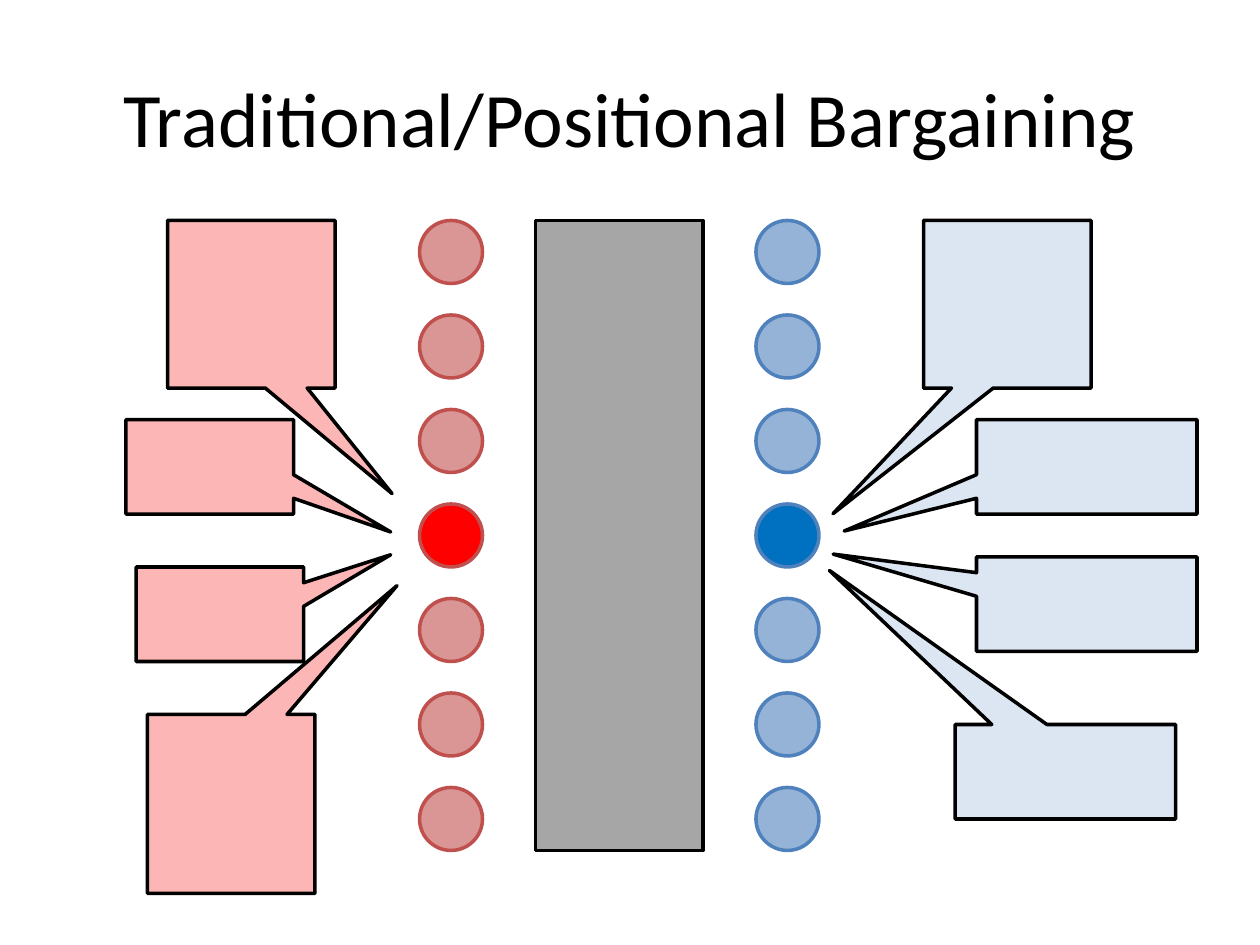
from dataclasses import dataclass

from pptx import Presentation
from pptx.dml.color import RGBColor
from pptx.enum.shapes import MSO_SHAPE
from pptx.enum.text import MSO_ANCHOR, PP_ALIGN
from pptx.util import Inches, Pt

RECT = MSO_SHAPE.RECTANGLE
OVAL = MSO_SHAPE.OVAL
CALLOUT = MSO_SHAPE.RECTANGULAR_CALLOUT
MIDDLE = MSO_ANCHOR.MIDDLE
CENTER = PP_ALIGN.CENTER


@dataclass(frozen=True)
class Theme:
    font: str = "Calibri"
    title: int = 44
    line: int = 2
    black: str = "000000"
    table: str = "A6A6A6"
    red: str = "D99694"
    red_edge: str = "C0504D"
    red_lead: str = "FF0000"
    red_talk: str = "FCB6B6"
    blue: str = "95B3D7"
    blue_edge: str = "4F81BD"
    blue_lead: str = "0070C0"
    blue_talk: str = "DCE6F2"


theme = Theme()


def add_box(shapes, kind, box, fill, edge):
    shape = shapes.add_shape(kind, *[Inches(n) for n in box])
    shape.shadow.inherit = False
    shape.fill.solid()
    shape.fill.fore_color.rgb = RGBColor.from_string(fill)
    shape.line.color.rgb = RGBColor.from_string(edge)
    shape.line.width = Pt(theme.line)
    return shape


deck = Presentation()
deck.slide_width, deck.slide_height = Inches(10), Inches(7.5)
slide = deck.slides.add_slide(deck.slide_layouts[5])

# Title
title = slide.shapes.title
title.left, title.top = Inches(0.5), Inches(0.3)
title.width, title.height = Inches(9), Inches(1.25)
frame = title.text_frame
frame.word_wrap = True
frame.vertical_anchor = MIDDLE
para = frame.paragraphs[0]
para.alignment = CENTER
run = para.add_run()
run.text = "Traditional/Positional Bargaining"
run.font.name = theme.font
run.font.size = Pt(theme.title)
run.font.color.rgb = RGBColor.from_string(theme.black)

# Bargaining table with a team seated on each side
TOP = 1.75
SEATS, LEAD, STEP, SEAT = 7, 3, 0.75, 0.5
teams = [
    (3.33, theme.red, theme.red_lead, theme.red_edge),
    (6, theme.blue, theme.blue_lead, theme.blue_edge),
]
group = slide.shapes.add_group_shape()
add_box(group.shapes, RECT, (4.25, TOP, 1.33, 5), theme.table, theme.black)
for left, fill, lead, edge in teams:
    for seat in range(SEATS):
        box = (left, TOP + seat * STEP, SEAT, SEAT)
        add_box(group.shapes, OVAL, box, lead if seat == LEAD else fill, edge)

# Callouts: box, then pointer tip as a share of box size from its centre
red, blue = theme.red_talk, theme.blue_talk
talks = [
    (red, (1.33, TOP, 1.33, 1.33), (0.84, 1.13)),
    (blue, (7.33, TOP, 1.33, 1.33), (-1.04, 1.25)),
    (red, (1, 3.33, 1.33, 0.75), (1.08, 0.69)),
    (red, (1.08, 4.5, 1.33, 0.75), (1.02, -0.63)),
    (red, (1.17, 5.67, 1.33, 1.42), (0.99, -1.22)),
    (blue, (7.75, 3.33, 1.75, 0.75), (-1.1, 0.68)),
    (blue, (7.75, 4.42, 1.75, 0.75), (-1.15, -0.53)),
    (blue, (7.58, 5.75, 1.75, 0.75), (-1.07, -2.13)),
]
for fill, box, tip in talks:
    talk = add_box(slide.shapes, CALLOUT, box, fill, theme.black)
    talk.adjustments[0], talk.adjustments[1] = tip

deck.save("out.pptx")
